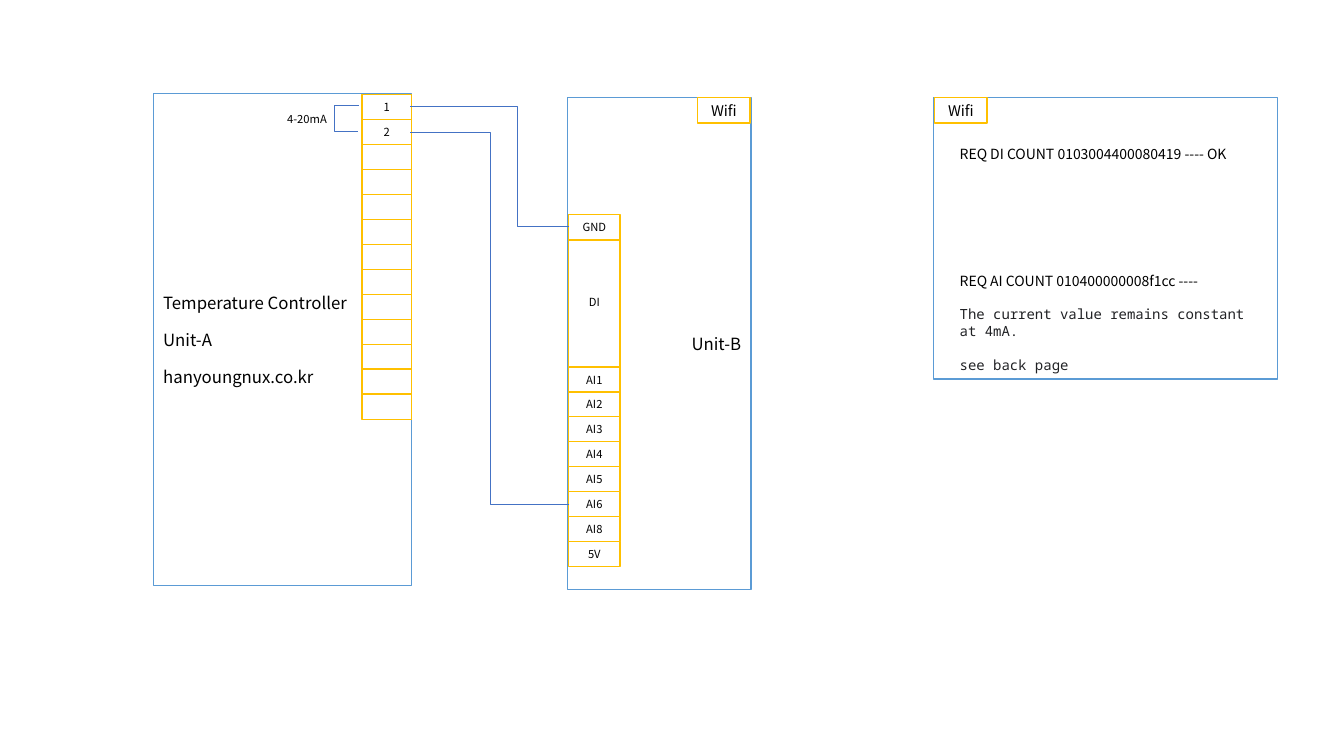
from dataclasses import dataclass

import lxml.etree
import pptx
import pptx.dml.color
import pptx.enum.shapes
import pptx.enum.text
import pptx.oxml.ns
import pptx.shapes.autoshape
import pptx.slide
import pptx.util

Inches = pptx.util.Inches
Pt = pptx.util.Pt
RGB = pptx.dml.color.RGBColor.from_string
Align = pptx.enum.text.PP_ALIGN
Anchor = pptx.enum.text.MSO_ANCHOR
AutoSize = pptx.enum.text.MSO_AUTO_SIZE


@dataclass(frozen=True)
class Theme:
    sans: str = "Noto Sans CJK KR"
    mono: str = "Noto Sans Mono"
    surface: str = "FFFFFF"
    ink: str = "000000"
    mono_ink: str = "202124"
    device: str = "5B9BD5"
    terminal: str = "FFC000"
    wire: str = "4472C4"
    device_size: float = 12
    wifi_size: float = 10.5
    note_size: float = 10
    terminal_size: float = 8
    outline: float = 1
    wire_width: float = 0.5
    paragraph_gap: float = 12


THEME = Theme()


@dataclass(frozen=True)
class Line:
    text: str
    size: float
    font: str = THEME.sans
    color: str = THEME.ink


@dataclass(frozen=True)
class Box:
    left: float
    top: float
    width: float
    height: float
    outline: str
    lines: tuple[Line, ...] = ()
    align: Align = Align.CENTER
    margin: float = 0


@dataclass(frozen=True)
class Note:
    left: float
    top: float
    width: float
    height: float
    lines: tuple[Line, ...]


@dataclass(frozen=True)
class TerminalStrip:
    left: float
    width: float
    first_top: float
    last_top: float
    labels: tuple[str, ...]


@dataclass(frozen=True)
class Wire:
    start: tuple[float, float]
    end: tuple[float, float]
    bend_x: float


CELL_HEIGHT = 0.25
AI_STRIP = TerminalStrip(5.64, 0.51, 3.64, 5.37, ("AI1", "AI2", "AI3", "AI4", "AI5", "AI6", "AI8", "5V"))
CONTROLLER_STRIP = TerminalStrip(3.59, 0.49, 0.94, 3.91, ("1", "2") + ("",) * 11)

CONTROLLER_LINES = tuple(
    Line(text, THEME.device_size)
    for text in ("Temperature Controller", "Unit-A", "hanyoungnux.co.kr")
)
WIFI = (Line("Wifi", THEME.wifi_size),)
DEVICES = (
    Box(1.52, 0.93, 2.56, 4.88, THEME.device, CONTROLLER_LINES, Align.LEFT, 0.1),
    Box(5.63, 0.97, 1.82, 4.88, THEME.device, (Line("Unit-B", THEME.device_size),), Align.RIGHT, 0.1),
    Box(9.26, 0.97, 3.41, 2.79, THEME.device),
)
MODULE_CELLS = (
    Box(6.92, 0.97, 0.52, CELL_HEIGHT, THEME.terminal, WIFI),
    Box(9.27, 0.97, 0.52, CELL_HEIGHT, THEME.terminal, WIFI),
    Box(5.64, 2.35, 0.51, 1.29, THEME.terminal, (Line("DI", THEME.terminal_size),)),
    Box(5.64, 2.13, 0.51, CELL_HEIGHT, THEME.terminal, (Line("GND", THEME.terminal_size),)),
)
WIRES = (
    Wire((3.56, 1.05), (3.55, 1.3), 3.31),
    Wire((4.07, 1.06), (5.64, 2.25), 5.13),
    Wire((4.07, 1.31), (5.64, 5), 4.86),
)
REQUEST_NOTES = (
    Note(9.42, 1.39, 3.2, 0.27, (Line("REQ DI COUNT 0103004400080419 ---- OK", THEME.note_size),)),
    Note(9.42, 2.65, 3.2, 1.28, (
        Line("REQ AI COUNT 010400000008f1cc ----", THEME.note_size),
        Line("The current value remains constant at 4mA.", THEME.note_size, THEME.mono, THEME.mono_ink),
        Line("see back page", THEME.note_size, THEME.mono, THEME.mono_ink),
    )),
)
SIGNAL_NOTE = Note(2.74, 1.06, 0.61, 0.25, (Line("4-20mA", THEME.terminal_size),))


def apply(target: object, values: dict[str, object]) -> None:
    for name, value in values.items():
        setattr(target, name, value)


def write_lines(shape: pptx.shapes.autoshape.Shape, lines: tuple[Line, ...],
                align: Align, frame_format: dict[str, object]) -> None:
    frame = shape.text_frame
    apply(frame, {"word_wrap": True} | frame_format)
    for index, line in enumerate(lines):
        paragraph = frame.add_paragraph() if index else frame.paragraphs[0]
        apply(paragraph, {"alignment": align, "space_before": Pt(THEME.paragraph_gap if index else 0)})
        run = paragraph.add_run()
        run.text = line.text
        apply(run.font, {"name": line.font, "size": Pt(line.size)})
        run.font.color.rgb = RGB(line.color)


def draw_box(slide: pptx.slide.Slide, box: Box) -> None:
    shape = slide.shapes.add_shape(
        pptx.enum.shapes.MSO_SHAPE.RECTANGLE,
        Inches(box.left), Inches(box.top), Inches(box.width), Inches(box.height),
    )
    shape.shadow.inherit = False
    shape.fill.solid()
    shape.fill.fore_color.rgb = RGB(THEME.surface)
    shape.line.color.rgb = RGB(box.outline)
    shape.line.width = Pt(THEME.outline)
    if box.lines:
        margin = Inches(box.margin)
        write_lines(shape, box.lines, box.align, {
            "vertical_anchor": Anchor.MIDDLE, "margin_left": margin, "margin_right": margin,
            "margin_top": 0, "margin_bottom": 0,
        })


def draw_strip(slide: pptx.slide.Slide, strip: TerminalStrip) -> None:
    pitch = (strip.last_top - strip.first_top) / (len(strip.labels) - 1)
    for index, label in enumerate(strip.labels):
        lines = (Line(label, THEME.terminal_size),) if label else ()
        top = strip.first_top + index * pitch
        draw_box(slide, Box(strip.left, top, strip.width, CELL_HEIGHT, THEME.terminal, lines))


def draw_wire(slide: pptx.slide.Slide, wire: Wire) -> None:
    connector = slide.shapes.add_connector(
        pptx.enum.shapes.MSO_CONNECTOR.ELBOW,
        *(Inches(value) for value in wire.start + wire.end),
    )
    connector.line.color.rgb = RGB(THEME.wire)
    connector.line.width = Pt(THEME.wire_width)
    qn = pptx.oxml.ns.qn
    properties = connector._element.spPr
    lxml.etree.SubElement(properties, qn("a:effectLst"))
    bend = (wire.bend_x - wire.start[0]) / (wire.end[0] - wire.start[0])
    guides = properties.find(qn("a:prstGeom")).find(qn("a:avLst"))
    lxml.etree.SubElement(guides, qn("a:gd"), name="adj1", fmla=f"val {round(bend * 100000)}")


def draw_note(slide: pptx.slide.Slide, note: Note, align: Align, frame_format: dict[str, object]) -> None:
    textbox = slide.shapes.add_textbox(
        Inches(note.left), Inches(note.top), Inches(note.width), Inches(note.height)
    )
    write_lines(textbox, note.lines, align, frame_format)


def main() -> None:
    presentation = pptx.Presentation()
    apply(presentation, {"slide_width": Inches(13.33), "slide_height": Inches(7.5)})
    slide = presentation.slides.add_slide(presentation.slide_layouts[6])
    for device in DEVICES:
        draw_box(slide, device)
    for strip in (CONTROLLER_STRIP, AI_STRIP):
        draw_strip(slide, strip)
    for cell in MODULE_CELLS:
        draw_box(slide, cell)
    for wire in WIRES:
        draw_wire(slide, wire)
    draw_note(slide, SIGNAL_NOTE, Align.CENTER,
              {"vertical_anchor": Anchor.MIDDLE, "margin_left": 0, "margin_right": 0})
    for note in REQUEST_NOTES:
        draw_note(slide, note, Align.LEFT, {"auto_size": AutoSize.SHAPE_TO_FIT_TEXT})
    presentation.save("out.pptx")


if __name__ == "__main__":
    main()
